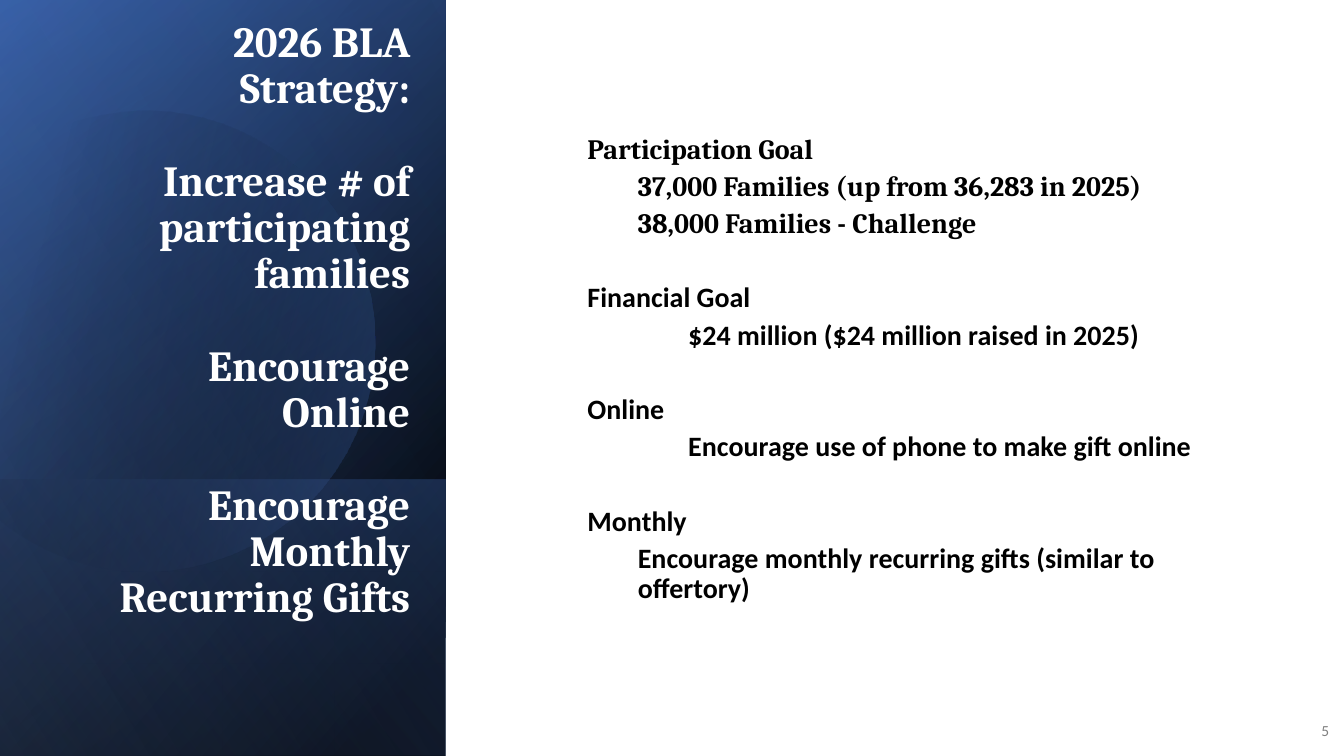
import math

from lxml import etree
from pptx import Presentation
from pptx.dml.color import RGBColor
from pptx.enum import shapes, text
from pptx.oxml import ns
from pptx.util import Cm, Pt

COLORS = {
    "white": "FFFFFF", "black": "000000", "navy": "2F5597",
    "blue": "4472C4", "sky": "8FAADC", "grey": "808080",
}
PAGE_WIDTH, PAGE_HEIGHT, PANEL_WIDTH = 33.87, 19.05, 11.23

# Panel layers: top, length, gradient angle, stops (position, color, opacity)
LOWER_LENGTH = 6.96
BACK_LAYERS = [
    (0, PAGE_HEIGHT, 50, [(8, "black", 100), (100, "navy", 100)]),
    (0, PAGE_HEIGHT, 30, [(0, "black", 0), (99, "blue", 46)]),
    (PAGE_HEIGHT - LOWER_LENGTH, LOWER_LENGTH, 130,
     [(2, "blue", 29), (100, "black", 30)]),
]
FRONT_LAYER = (0, PAGE_HEIGHT, 120, [(0, "black", 0), (99, "sky", 11)])

# Circle outline in cm as cubic curves; a pair of points is a straight edge
CIRCLE_CENTER, CIRCLE_TURN = (4.03, 8.5), -16.1
CIRCLE_CURVES = [
    [(3.78, 2.79), (6.25, 2.84), (8.51, 4.5), (9.22, 6.99)],
    [(9.22, 6.99), (10.11, 10.08), (8.33, 13.28), (5.26, 14.17)],
    [(5.26, 14.17), (3.33, 14.73), (1.35, 14.25), (-0.08, 13.06)],
    [(-0.08, 13.06), (-0.38, 12.78)],
    [(-0.38, 12.78), (-0.38, 4.45)],
    [(-0.38, 4.45), (0, 4.09)],
    [(0, 4.09), (0.58, 3.58), (1.27, 3.25), (2.03, 3.02)],
    [(2.03, 3.02), (2.62, 2.87), (3.2, 2.79), (3.78, 2.79)],
]

STRATEGY = [
    "2026 BLA Strategy:",
    "Increase # of participating families",
    "Encourage Online",
    "Encourage Monthly Recurring Gifts",
]
# Heading, font, indent of the details in cm, details
GOALS = [
    ("Participation Goal", "Cambria", 2.54,
     ["37,000 Families (up from 36,283 in 2025)", "38,000 Families - Challenge"]),
    ("Financial Goal", "Calibri", 3.81, ["$24 million ($24 million raised in 2025)"]),
    ("Online", "Calibri", 3.81, ["Encourage use of phone to make gift online"]),
    ("Monthly", "Calibri", 2.54,
     ["Encourage monthly recurring gifts (similar to offertory)"]),
]


def rgb(name):
    return RGBColor.from_string(COLORS[name])


def place(item, left, top, width, height):
    item.left, item.top, item.width, item.height = map(Cm, (left, top, width, height))


def clear_style(shape):
    shape.shadow.inherit = False
    shape.line.fill.background()


def fill_gradient(shape, angle, stops):
    shape.fill.background()
    properties = shape._element.spPr
    gradient = etree.Element(ns.qn("a:gradFill"), rotWithShape="1")
    stop_list = etree.SubElement(gradient, ns.qn("a:gsLst"))
    for position, color, opacity in stops:
        stop = etree.SubElement(stop_list, ns.qn("a:gs"), pos=str(position * 1000))
        tint = etree.SubElement(stop, ns.qn("a:srgbClr"), val=COLORS[color])
        if opacity < 100:
            etree.SubElement(tint, ns.qn("a:alpha"), val=str(opacity * 1000))
    etree.SubElement(gradient, ns.qn("a:lin"), ang=str(angle * 60000), scaled="0")
    properties.replace(properties.find(ns.qn("a:noFill")), gradient)


def add_layer(page, top, length, angle, stops):
    """A mirrored rectangle, turned a quarter to stand in the left panel."""
    shift = (length - PANEL_WIDTH) / 2
    layer = page.shapes.add_shape(shapes.MSO_SHAPE.RECTANGLE, Cm(-shift),
                                  Cm(top + shift), Cm(length), Cm(PANEL_WIDTH))
    clear_style(layer)
    layer.rotation = 90
    layer._element.spPr.xfrm.set("flipH", "1")
    fill_gradient(layer, angle, stops)


def curve_points(curve, steps=16):
    if len(curve) == 2:
        return [curve[1]]
    points = []
    for step in range(1, steps + 1):
        t = step / steps
        weights = [math.comb(3, k) * t ** k * (1 - t) ** (3 - k) for k in range(4)]
        points.append(tuple(sum(w * point[axis] for w, point in zip(weights, curve))
                            for axis in (0, 1)))
    return points


def untwist(point):
    """Position before the circle is turned, so that its gradient turns too."""
    turn = math.radians(-CIRCLE_TURN)
    x, y = (value - middle for value, middle in zip(point, CIRCLE_CENTER))
    return (Cm(CIRCLE_CENTER[0] + x * math.cos(turn) - y * math.sin(turn)),
            Cm(CIRCLE_CENTER[1] + x * math.sin(turn) + y * math.cos(turn)))


def add_circle(page):
    outline = [untwist(point) for curve in CIRCLE_CURVES for point in curve_points(curve)]
    builder = page.shapes.build_freeform(*outline[-1])
    builder.add_line_segments(outline[:-1], close=True)
    circle = builder.convert_to_shape()
    clear_style(circle)
    circle.rotation = CIRCLE_TURN
    fill_gradient(circle, 30, [(29, "black", 0), (100, "blue", 43)])


def format_para(para, font, size, color, bold=False, before=0):
    para.line_spacing = 0.9
    para.space_before = Pt(before)
    for span in para.runs:
        span.font.name, span.font.size, span.font.bold = font, Pt(size), bold
        span.font.color.rgb = rgb(color)


def prepare_frame(box, anchor):
    frame = box.text_frame
    frame.word_wrap = True
    frame.auto_size = text.MSO_AUTO_SIZE.NONE
    frame.vertical_anchor = anchor
    return frame


def fill_title(title):
    place(title, 1.7, 7.57, 8.89, 9.4)
    frame = prepare_frame(title, text.MSO_ANCHOR.BOTTOM)
    frame.margin_bottom = Cm(1.3)
    frame.text = "\n".join(STRATEGY)
    for index, para in enumerate(frame.paragraphs):
        para.alignment = text.PP_ALIGN.RIGHT
        format_para(para, "Cambria", 30.6, "white", True, 33 if index else 0)


def fill_goals(body):
    place(body, 13.28, 1.42, 18.21, 15.8)
    frame = prepare_frame(body, text.MSO_ANCHOR.MIDDLE)
    rows = []
    for heading, font, indent, details in GOALS:
        rows.append((heading, font, 1.27, 31.6 if rows else 0))
        rows += [(detail, font, indent, 5) for detail in details]
    frame.text = "\n".join(row[0] for row in rows)
    for para, (_, font, indent, before) in zip(frame.paragraphs, rows):
        para.level = 2 if indent == 2.54 else 1
        properties = para._p.get_or_add_pPr()
        properties.set("marL", str(Cm(indent)))
        properties.set("indent", "0")
        etree.SubElement(properties, ns.qn("a:buNone"))
        para.alignment = text.PP_ALIGN.LEFT
        format_para(para, font, 20, "black", True, before)


def add_page_number(page):
    box = page.shapes.add_textbox(Cm(32.51), Cm(17.93), Cm(1.24), Cm(1.02))
    frame = prepare_frame(box, text.MSO_ANCHOR.MIDDLE)
    frame.text = "5"
    para = frame.paragraphs[0]
    para.alignment = text.PP_ALIGN.RIGHT
    format_para(para, "Calibri", 11, "grey")
    para.space_after = Pt(6)


def main():
    deck = Presentation()
    deck.slide_width, deck.slide_height = Cm(PAGE_WIDTH), Cm(PAGE_HEIGHT)
    page = deck.slides.add_slide(deck.slide_layouts[1])
    title, body = page.placeholders

    # Background and left panel
    backdrop = page.shapes.add_shape(shapes.MSO_SHAPE.RECTANGLE, 0, 0,
                                     deck.slide_width, deck.slide_height)
    clear_style(backdrop)
    backdrop.fill.solid()
    backdrop.fill.fore_color.rgb = rgb("white")
    for layer in BACK_LAYERS:
        add_layer(page, *layer)
    add_circle(page)
    add_layer(page, *FRONT_LAYER)

    # Text, in front of the panel
    for holder in (title, body):
        page.shapes._spTree.append(holder._element)
    fill_title(title)
    fill_goals(body)
    add_page_number(page)
    deck.save("out.pptx")


if __name__ == "__main__":
    main()
